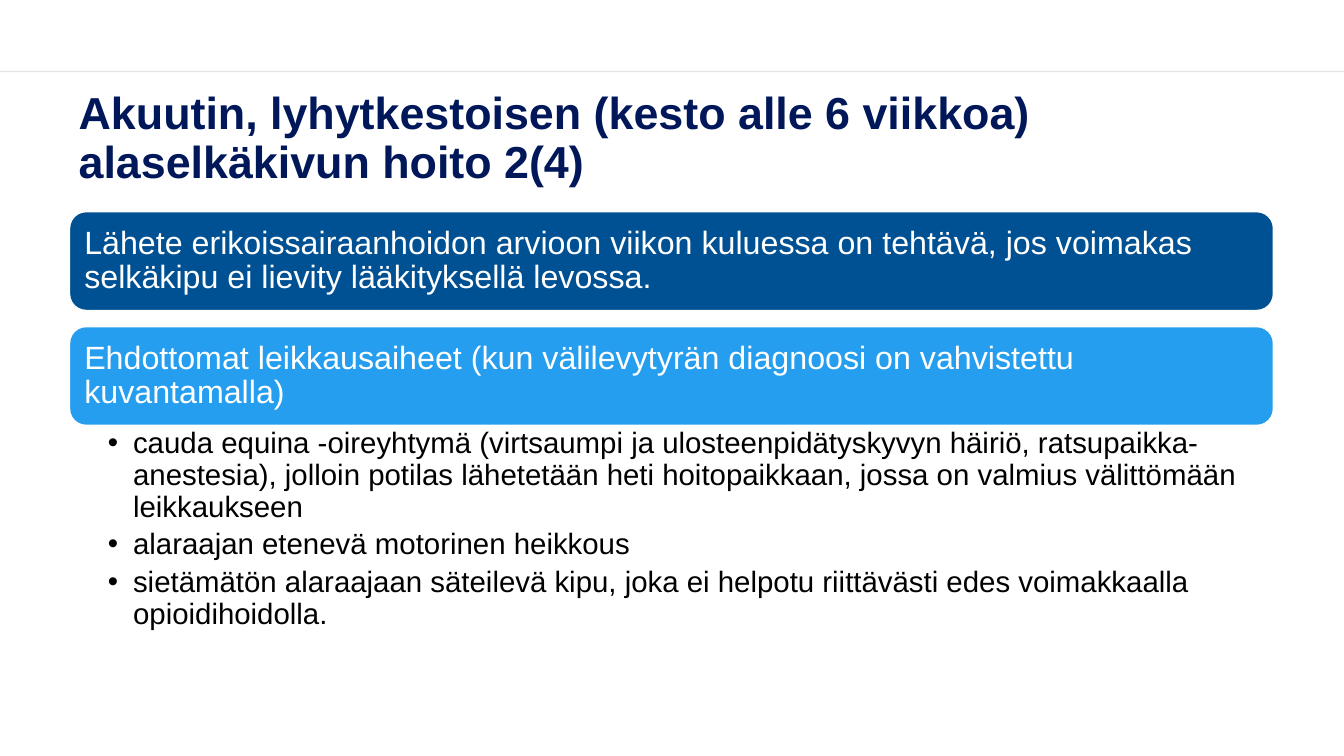
from dataclasses import dataclass

import pptx
import pptx.dml.color
import pptx.enum.shapes
import pptx.enum.text
import pptx.oxml.ns
import pptx.shapes.autoshape
import pptx.slide
import pptx.text.text
import pptx.util
from lxml import etree

Inches = pptx.util.Inches
FONT = "Arial"
LEFT, WIDTH = 0.69, 11.94
BANNER_TOP, BANNER_HEIGHT, BANNER_PITCH = 2.1, 0.98, 1.14


@dataclass
class Banner:
    text: str
    fill: str


TITLE = "Akuutin, lyhytkestoisen (kesto alle 6 viikkoa) alaselkäkivun hoito 2(4)"
BANNERS = [
    Banner("Lähete erikoissairaanhoidon arvioon viikon kuluessa on tehtävä, jos voimakas "
           "selkäkipu ei lievity lääkityksellä levossa.", "005193"),
    Banner("Ehdottomat leikkausaiheet (kun välilevytyrän diagnoosi on vahvistettu "
           "kuvantamalla)", "269EEF"),
]
SURGERY_INDICATIONS = [
    "cauda equina -oireyhtymä (virtsaumpi ja ulosteenpidätyskyvyn häiriö, "
    "ratsupaikka-anestesia), jolloin potilas lähetetään heti hoitopaikkaan, jossa on "
    "valmius välittömään leikkaukseen",
    "alaraajan etenevä motorinen heikkous",
    "sietämätön alaraajaan säteilevä kipu, joka ei helpotu riittävästi edes voimakkaalla "
    "opioidihoidolla.",
]


def color(value: str) -> pptx.dml.color.RGBColor:
    return pptx.dml.color.RGBColor.from_string(value)


def add_xml(parent: etree._Element, tag: str, **attributes: str) -> etree._Element:
    return etree.SubElement(parent, pptx.oxml.ns.qn(tag), attributes)


def place(shape: pptx.shapes.autoshape.Shape, left: float, top: float,
          width: float, height: float) -> None:
    shape.left, shape.top = Inches(left), Inches(top)
    shape.width, shape.height = Inches(width), Inches(height)


def set_insets(frame: pptx.text.text.TextFrame, left: float, top: float,
               right: float, bottom: float) -> None:
    frame.word_wrap = True
    frame.auto_size = pptx.enum.text.MSO_AUTO_SIZE.NONE
    frame.margin_left, frame.margin_top = Inches(left), Inches(top)
    frame.margin_right, frame.margin_bottom = Inches(right), Inches(bottom)


def format_paragraph(paragraph: pptx.text.text._Paragraph, size: float,
                     font_color: str, bold: bool = False) -> None:
    paragraph.alignment = pptx.enum.text.PP_ALIGN.LEFT
    paragraph.line_spacing = 0.9
    for run in paragraph.runs:
        run.font.name = FONT
        run.font.size = pptx.util.Pt(size)
        run.font.bold = bold
        run.font.color.rgb = color(font_color)


def add_header_rule(slide: pptx.slide.Slide) -> None:
    rule = slide.shapes.add_connector(
        pptx.enum.shapes.MSO_CONNECTOR.STRAIGHT,
        Inches(0), Inches(0.71), Inches(13.33), Inches(0.71))
    rule.line.width = pptx.util.Pt(1)
    rule.line.color.rgb = color("000000")
    properties = rule._element.spPr
    fill_color = properties.find(".//" + pptx.oxml.ns.qn("a:srgbClr"))
    add_xml(fill_color, "a:alpha", val="10000")
    add_xml(properties, "a:effectLst")


def fill_title(slide: pptx.slide.Slide) -> None:
    title = slide.shapes.title
    place(title, 0.68, 0.93, WIDTH, 0.91)
    frame = title.text_frame
    frame.text = TITLE
    set_insets(frame, 0.1, 0.05, 0.1, 0.05)
    frame.vertical_anchor = pptx.enum.text.MSO_ANCHOR.MIDDLE
    format_paragraph(frame.paragraphs[0], 32, "001759", bold=True)


def add_banner(slide: pptx.slide.Slide, banner: Banner, top: float) -> None:
    shape = slide.shapes.add_shape(
        pptx.enum.shapes.MSO_SHAPE.ROUNDED_RECTANGLE,
        Inches(LEFT), Inches(top), Inches(WIDTH), Inches(BANNER_HEIGHT))
    shape.shadow.inherit = False
    shape.fill.solid()
    shape.fill.fore_color.rgb = color(banner.fill)
    shape.line.color.rgb = color("FFFFFF")
    shape.line.width = pptx.util.Pt(1)
    frame = shape.text_frame
    frame.text = banner.text
    set_insets(frame, 0.1, 0.1, 0.1, 0.1)
    frame.vertical_anchor = pptx.enum.text.MSO_ANCHOR.MIDDLE
    format_paragraph(frame.paragraphs[0], 23, "FFFFFF")


def add_bullets(slide: pptx.slide.Slide, items: list[str]) -> None:
    box = slide.shapes.add_textbox(Inches(LEFT), Inches(4.22), Inches(WIDTH), Inches(2.01))
    frame = box.text_frame
    set_insets(frame, 0.38, 0.03, 0.16, 0.03)
    frame.text = "\n".join(items)
    for paragraph in frame.paragraphs:
        paragraph.level = 1
        paragraph.space_after = pptx.util.Pt(4.2)
        format_paragraph(paragraph, 21, "000000")
        properties = paragraph._p.get_or_add_pPr()
        properties.set("marL", str(Inches(0.25)))
        properties.set("indent", str(-Inches(0.25)))
        add_xml(properties, "a:buFont", typeface=FONT)
        add_xml(properties, "a:buChar", char="•")


def main() -> None:
    presentation = pptx.Presentation()
    presentation.slide_width = Inches(13.33)
    presentation.slide_height = Inches(7.5)
    title_only = presentation.slide_layouts.get_by_name("Title Only")
    slide = presentation.slides.add_slide(title_only)
    add_header_rule(slide)
    fill_title(slide)
    for index, banner in enumerate(BANNERS):
        add_banner(slide, banner, BANNER_TOP + index * BANNER_PITCH)
    add_bullets(slide, SURGERY_INDICATIONS)
    presentation.save("out.pptx")


if __name__ == "__main__":
    main()
